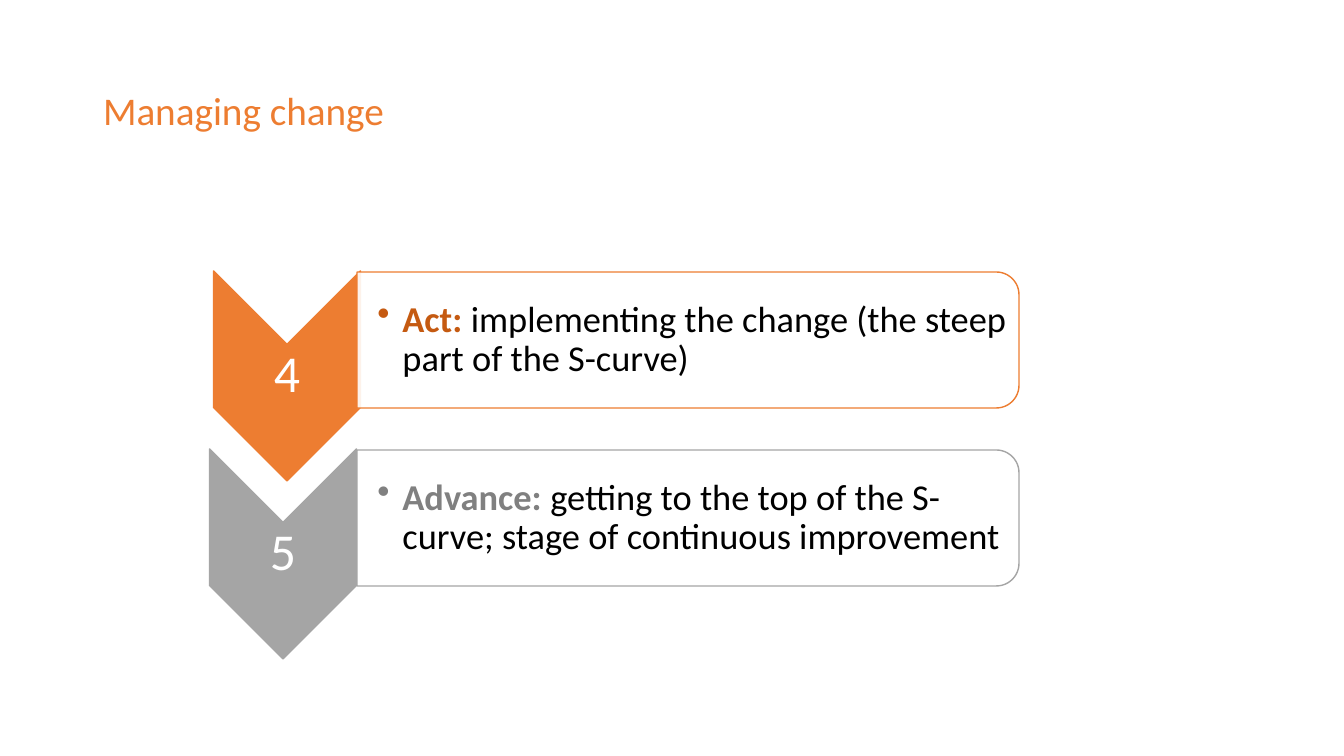
"""Build the "Managing change" slide with its fourth and fifth steps."""
from lxml import etree
from pptx import Presentation
from pptx.dml.color import RGBColor
from pptx.enum.shapes import MSO_SHAPE
from pptx.enum.text import MSO_ANCHOR, PP_ALIGN
from pptx.oxml.ns import qn
from pptx.util import Pt

CHEVRON = MSO_SHAPE.CHEVRON
PANEL = MSO_SHAPE.ROUND_2_SAME_RECTANGLE
MIDDLE = MSO_ANCHOR.MIDDLE
CENTER, LEFT = PP_ALIGN.CENTER, PP_ALIGN.LEFT

COLORS = {
    "orange": "ED7D31", "dark orange": "C55A11",
    "gray": "A5A5A5", "dark gray": "808080",
    "white": "FFFFFF", "black": "000000",
}
FONT = "Calibri"
HEADING = "Managing change"
STEPS = [
    ("4", "Act: ", "implementing the change (the steep part of the S-curve)",
     "orange", "dark orange", 287),
    ("5", "Advance: ", "getting to the top of the S-curve; stage of continuous improvement",
     "gray", "dark gray", 283),
]

EMU_PER_PX = 914400 / 100.8
SLIDE_SIZE = (1344, 756)
HEADING_BOX = (93, 40, 1159, 146)
CHEVRON_SIZE = (210, 147)
NUMBER_SIZE = (147, 62)
PANEL_SIZE = (136, 662)
DETAIL_SIZE = (655, 123)
CHEVRON_Y, PANEL_Y, STEP_GAP = 376, 340, 178
PANEL_X, DETAIL_X = 688, 685
BULLET_INDENT = 25


def px(length):
    return round(length * EMU_PER_PX)


def color(name):
    return RGBColor.from_string(COLORS[name])


def centered(x, y, size):
    width, height = size
    return [px(v) for v in (x - width / 2, y - height / 2, width, height)]


def add_turned(slide, kind, x, y, size, fill, line):
    shape = slide.shapes.add_shape(kind, *centered(x, y, size))
    shape.rotation = 90
    shape.shadow.inherit = False
    shape.fill.solid()
    shape.fill.fore_color.rgb = color(fill)
    shape.line.color.rgb = color(line)
    shape.line.width = Pt(1)
    return shape


def write(frame, parts, size, align):
    paragraph = frame.paragraphs[0]
    paragraph.alignment = align
    paragraph.line_spacing = 0.9
    for text, color_name, bold in parts:
        run = paragraph.add_run()
        run.text = text
        run.font.name = FONT
        run.font.size = Pt(size)
        run.font.bold = bold
        run.font.color.rgb = color(color_name)
    return paragraph


def add_label(slide, x, y, box_size, insets, parts, size, align):
    frame = slide.shapes.add_textbox(*centered(x, y, box_size)).text_frame
    frame.word_wrap = True
    frame.vertical_anchor = MIDDLE
    frame.margin_left, frame.margin_top, frame.margin_right, frame.margin_bottom = map(px, insets)
    return write(frame, parts, size, align)


def add_bullet(paragraph):
    properties = paragraph._p.get_or_add_pPr()
    properties.set("marL", str(px(BULLET_INDENT)))
    properties.set("indent", str(-px(BULLET_INDENT)))
    etree.SubElement(properties, qn("a:buChar")).set("char", "•")


def add_step(slide, index, step):
    number, term, explanation, accent, term_color, chevron_x = step
    chevron_y = CHEVRON_Y + index * STEP_GAP
    panel_y = PANEL_Y + index * STEP_GAP

    add_turned(slide, CHEVRON, chevron_x, chevron_y, CHEVRON_SIZE, accent, accent)
    add_label(slide, chevron_x, chevron_y, NUMBER_SIZE, (3, 3, 3, 3),
              [(number, "white", False)], 37, CENTER)

    panel = add_turned(slide, PANEL, PANEL_X, panel_y, PANEL_SIZE, "white", accent)
    panel_color = panel.fill._xPr.find(qn("a:solidFill"))[0]
    etree.SubElement(panel_color, qn("a:alpha")).set("val", "90000")
    detail = add_label(slide, DETAIL_X, panel_y, DETAIL_SIZE, (20, 2, 2, 2),
                       [(term, term_color, True), (explanation, "black", False)], 26, LEFT)
    add_bullet(detail)


def main():
    deck = Presentation()
    deck.slide_width, deck.slide_height = map(px, SLIDE_SIZE)
    slide = deck.slides.add_slide(deck.slide_layouts.get_by_name("Title Only"))

    heading = slide.shapes.title
    heading.left, heading.top, heading.width, heading.height = map(px, HEADING_BOX)
    heading.text_frame.vertical_anchor = MIDDLE
    write(heading.text_frame, [(HEADING, "orange", False)], 28, LEFT)

    for index, step in enumerate(STEPS):
        add_step(slide, index, step)
    deck.save("out.pptx")


if __name__ == "__main__":
    main()
